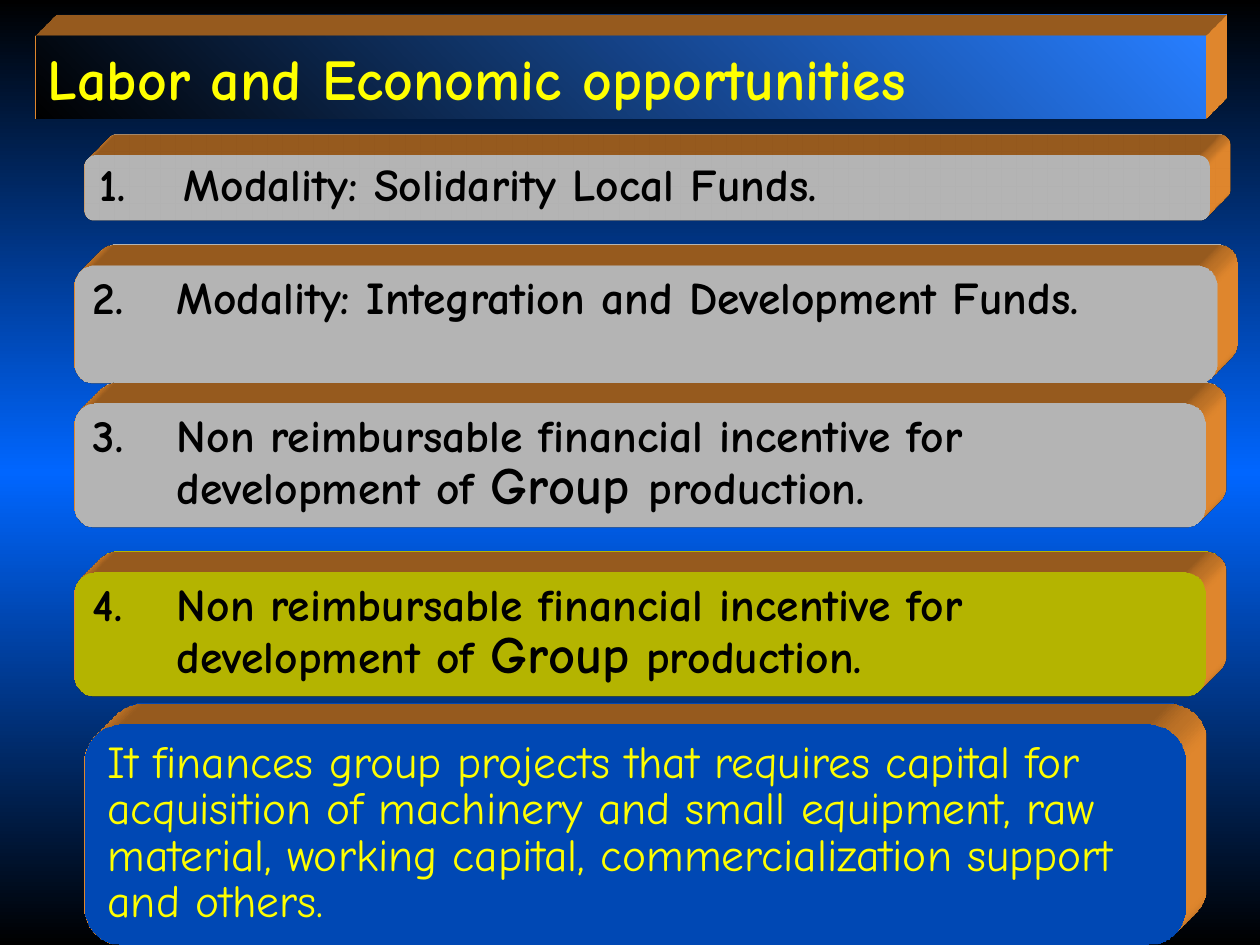
from copy import deepcopy
from dataclasses import dataclass

from lxml.etree import SubElement
from pptx import Presentation
from pptx.dml.color import RGBColor
from pptx.enum.shapes import MSO_SHAPE as Preset
from pptx.enum.text import MSO_ANCHOR as Anchor, MSO_AUTO_SIZE as AutoSize, PP_ALIGN as Align
from pptx.oxml import parse_xml
from pptx.oxml.ns import nsdecls, qn
from pptx.util import Pt

BLACK = RGBColor(0x00, 0x00, 0x00)
WHITE = RGBColor(0xFF, 0xFF, 0xFF)
YELLOW = RGBColor(0xFF, 0xFF, 0x00)
BLUE = RGBColor(0x00, 0x66, 0xFF)
BAND_BLUE = RGBColor(0x27, 0x7E, 0xFF)
ORANGE = RGBColor(0xFF, 0x99, 0x33)

FONT = "Comic Neue"
BODY_SIZE = 26
EMPHASIS_SIZE = 30
TITLE_SIZE = 33
NUMBER_INDENT = 48
CORNER = 0.167


@dataclass(frozen=True)
class Box:
    left: float
    top: float
    width: float
    height: float

    def lengths(self) -> tuple:
        return tuple(Pt(v) for v in (self.left, self.top, self.width, self.height))


@dataclass(frozen=True)
class Panel:
    box: Box
    fill: RGBColor
    text_color: RGBColor
    runs: tuple
    number: int = 0


INCENTIVE = ("Non reimbursable financial incentive for development of ", BODY_SIZE)

TITLE_BOX = Box(20.2, 20.2, 668.9, 47.5)
PANELS = (
    Panel(Box(48.2, 88.6, 643, 37.4), WHITE, BLACK,
          (("Modality: Solidarity Local Funds.", BODY_SIZE),), 1),
    Panel(Box(42.5, 152, 653, 67), WHITE, BLACK,
          (("Modality: Integration and Development Funds.", BODY_SIZE),), 2),
    Panel(Box(42.5, 230.4, 646.6, 71.3), WHITE, BLACK,
          (INCENTIVE, ("Group ", EMPHASIS_SIZE), ("production.", BODY_SIZE)), 3),
    Panel(Box(42.5, 326.9, 646.6, 71.3), YELLOW, BLACK,
          (INCENTIVE, ("Group", EMPHASIS_SIZE), (" production.", BODY_SIZE)), 4),
    Panel(Box(48.2, 414, 629.3, 126), BLUE, YELLOW,
          (("It finances group projects that requires capital for acquisition of "
            "machinery and small equipment, raw material, working capital, "
            "commercialization support and others.", BODY_SIZE),)),
)


def apply_format(target, values: dict) -> None:
    for name, value in values.items():
        setattr(target, name, value)


def add_run(paragraph, text: str, size: float, color: RGBColor, bold: bool) -> None:
    run = paragraph.add_run()
    run.text = text
    apply_format(run.font, {"name": FONT, "size": Pt(size), "bold": bold})
    run.font.color.rgb = color


def set_gradient(fill, angle: float, colors: tuple) -> None:
    fill.gradient()
    fill.gradient_angle = angle
    for stop, color, position in zip(fill.gradient_stops, colors, (0, 1)):
        stop.color.rgb = color
        stop.position = position


def paint_background(slide) -> None:
    fill = slide.background.fill
    set_gradient(fill, 90, (BLACK, BLACK))
    stops = slide.element.xpath("./p:cSld/p:bg//a:gsLst")[0]
    stops.insert(1, deepcopy(stops[0]))
    middle = fill.gradient_stops[1]
    middle.color.rgb = BLUE
    middle.position = 0.5


def extrude(shape) -> None:
    properties = shape.element.spPr
    properties.append(parse_xml(
        f'<a:scene3d {nsdecls("a")}><a:camera prst="legacyObliqueTopRight"/>'
        '<a:lightRig rig="legacyFlat3" dir="b"/></a:scene3d>'))
    properties.append(parse_xml(
        f'<a:sp3d {nsdecls("a")} extrusionH="430200" prstMaterial="legacyMatte">'
        '<a:bevelT w="13500" h="13500" prst="angle"/>'
        '<a:bevelB w="13500" h="13500" prst="angle"/>'
        f'<a:extrusionClr><a:srgbClr val="{ORANGE}"/></a:extrusionClr></a:sp3d>'))


def add_block(slide, preset: Preset, box: Box):
    block = slide.shapes.add_shape(preset, *box.lengths())
    block.shadow.inherit = False
    block.line.fill.background()
    extrude(block)
    return block


def add_number(paragraph, number: int) -> None:
    properties = paragraph._p.get_or_add_pPr()
    properties.set("marL", str(Pt(NUMBER_INDENT)))
    properties.set("indent", str(-Pt(NUMBER_INDENT)))
    SubElement(properties, qn("a:buFontTx"))
    SubElement(properties, qn("a:buAutoNum"), type="arabicPeriod", startAt=str(number))


def add_panel(slide, panel: Panel) -> None:
    block = add_block(slide, Preset.ROUNDED_RECTANGLE, panel.box)
    block.adjustments[0] = CORNER
    block.fill.solid()
    block.fill.fore_color.rgb = panel.fill
    frame = block.text_frame
    apply_format(frame, {"word_wrap": True, "auto_size": AutoSize.NONE,
                         "vertical_anchor": Anchor.TOP})
    paragraph = frame.paragraphs[0]
    apply_format(paragraph, {"alignment": Align.LEFT, "line_spacing": 0.85})
    if panel.number:
        add_number(paragraph, panel.number)
    for text, size in panel.runs:
        add_run(paragraph, text, size, panel.text_color, panel.number > 0)


def add_title(slide, text: str) -> None:
    band = add_block(slide, Preset.RECTANGLE, TITLE_BOX)
    set_gradient(band.fill, 45, (BLACK, BAND_BLUE))
    title = slide.shapes.title
    band.element.addnext(title.element)
    apply_format(title, dict(zip(("left", "top", "width", "height"), TITLE_BOX.lengths())))
    frame = title.text_frame
    apply_format(frame, {"word_wrap": True, "auto_size": AutoSize.NONE,
                         "vertical_anchor": Anchor.MIDDLE})
    paragraph = frame.paragraphs[0]
    paragraph.alignment = Align.LEFT
    add_run(paragraph, text, TITLE_SIZE, YELLOW, True)


def main() -> None:
    deck = Presentation()
    apply_format(deck, {"slide_width": Pt(720), "slide_height": Pt(540)})
    slide = deck.slides.add_slide(deck.slide_layouts[5])
    paint_background(slide)
    add_title(slide, "Labor and Economic opportunities")
    for panel in PANELS:
        add_panel(slide, panel)
    deck.save("out.pptx")


if __name__ == "__main__":
    main()
